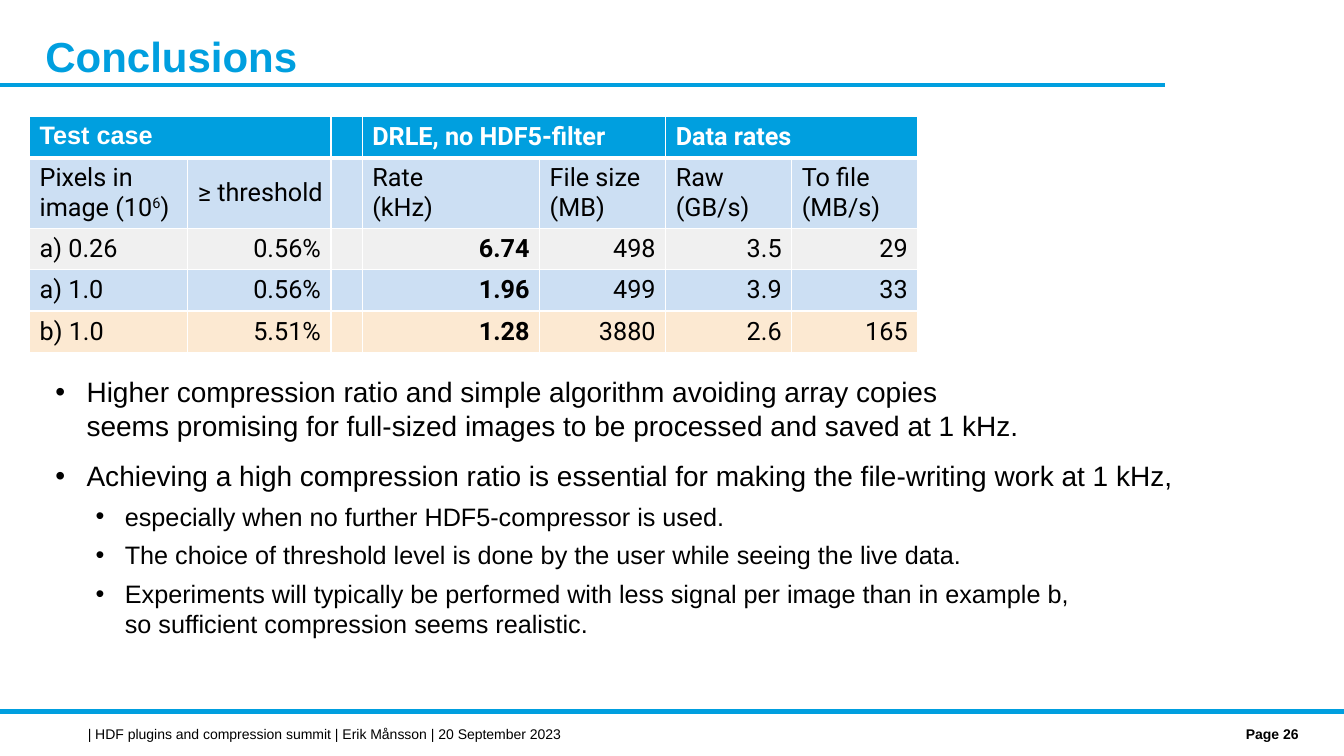
from lxml import etree
from pptx import Presentation
from pptx import util as u
from pptx.dml import color
from pptx.enum import shapes, text
from pptx.oxml import ns

HUE = {"blue": "009FDF", "pale": "CCDFF3", "gray": "F0F0F0",
       "peach": "FCE9D2", "white": "FFFFFF", "black": "000000"}
RIGHT = text.PP_ALIGN.RIGHT
MID = text.MSO_ANCHOR.MIDDLE


def rgb(name):
    return color.RGBColor.from_string(HUE[name])


def write(para, words, size=18, hue="black", bold=False, face="Arial",
          align=None, after=0, lead=None, indent=None):
    if indent:
        left, hang = indent
        props = para._p.get_or_add_pPr()
        props.set("marL", str(u.Inches(left)))
        props.set("indent", str(-u.Inches(hang)))
        etree.SubElement(props, ns.qn("a:buFont"), typeface="Arial")
        etree.SubElement(props, ns.qn("a:buChar"), char="•")
    para.alignment = align
    para.space_after = u.Pt(after)
    para.line_spacing = lead
    for row, line in enumerate(words.split("\n")):
        if row:
            para.add_line_break()
        for turn, part in enumerate(line.split("^")):
            run = para.add_run()
            run.text = part
            font = run.font
            font.size, font.bold, font.name = u.Pt(size), bold, face
            font.color.rgb = rgb(hue)
            if turn % 2:
                run._r.get_or_add_rPr().set("baseline", "30000")


class Deck:
    """Builds one slide, with lengths in hundredths of its width and height."""

    def __init__(self):
        self.file = Presentation()
        self.file.slide_width = u.Inches(13.33)
        self.file.slide_height = u.Inches(7.5)
        self.slide = self.file.slides.add_slide(self.file.slide_layouts[6])

    def wide(self, share):
        return u.Emu(round(self.file.slide_width * share / 100))

    def high(self, share):
        return u.Emu(round(self.file.slide_height * share / 100))

    def area(self, x, y, w, h):
        return self.wide(x), self.high(y), self.wide(w), self.high(h)

    def text(self, place, items, pad=(0, 0), anchor=text.MSO_ANCHOR.TOP):
        frame = self.slide.shapes.add_textbox(*self.area(*place)).text_frame
        frame.word_wrap = True
        frame.vertical_anchor = anchor
        frame.margin_left = frame.margin_right = u.Inches(pad[0])
        frame.margin_top = frame.margin_bottom = u.Inches(pad[1])
        for num, (words, style) in enumerate(items):
            para = frame.add_paragraph() if num else frame.paragraphs[0]
            write(para, words, **style)

    def rule(self, y, end):
        line = self.slide.shapes.add_connector(
            shapes.MSO_CONNECTOR.STRAIGHT, 0, self.high(y),
            self.wide(end), self.high(y))
        line.line.color.rgb = rgb("blue")
        line.line.width = u.Pt(3)
        etree.SubElement(line._element.spPr, ns.qn("a:effectLst"))

    def edge(self, cell, side, width):
        line = etree.SubElement(cell._tc.get_or_add_tcPr(),
                                ns.qn("a:ln" + side), w=str(u.Pt(width)))
        fill = etree.SubElement(line, ns.qn("a:solidFill"))
        etree.SubElement(fill, ns.qn("a:srgbClr"), val=HUE["white"])

    def table(self, x, y, cols, rows, data, fills, style):
        place = self.area(x, y, sum(cols), sum(rows))
        grid = self.slide.shapes.add_table(len(rows), len(cols), *place).table
        grid.horz_banding = False
        for col, share in zip(grid.columns, cols):
            col.width = self.wide(share)
        for r, share in enumerate(rows):
            grid.rows[r].height = self.high(share)
            for c, words in enumerate(data[r]):
                cell = grid.cell(r, c)
                for side in "LRTB":
                    thick = (r, side) in ((0, "B"), (1, "T"))
                    self.edge(cell, side, 3 if thick else 1)
                cell.fill.solid()
                cell.fill.fore_color.rgb = rgb(fills[r])
                if words is None:
                    grid.cell(r, c - 1).merge(cell)
                elif words:
                    look, anchor = style(r, c)
                    cell.vertical_anchor = anchor
                    cell.margin_right = u.Inches(0.04 if r < 2 else 0.1)
                    write(cell.text_frame.paragraphs[0], words, **look)


def style(row, col):
    if row == 0:
        face = "Roboto" if col else "Arial"
        return (dict(hue="white", bold=True, face=face),
                MID if col else text.MSO_ANCHOR.TOP)
    figure = row > 1 and col > 0
    return dict(face="Roboto", bold=figure and col == 3,
                align=RIGHT if figure else None), MID


def main():
    deck = Deck()
    deck.rule(11.2, 86.65)
    deck.rule(94.13, 100)
    deck.text((3.38, 4.53, 81.77, 6.53),
              [("Conclusions", dict(size=30, hue="blue", bold=True, lead=0.9))],
              anchor=MID)
    deck.text((6.53, 96, 81.62, 2.67),
              [("| HDF plugins and compression summit | Erik Månsson | "
                "20 September 2023", dict(size=10))])
    deck.text((88.97, 96, 7.65, 2.67),
              [("Page 26", dict(size=10, bold=True, align=RIGHT))])

    top = dict(size=20, after=6, indent=(0.31, 0.31))
    sub = dict(size=18, after=6, indent=(0.69, 0.29))
    deck.text((3.38, 48.93, 93.32, 44.67), [
        ("Higher compression ratio and simple algorithm avoiding array copies\n"
         "seems promising for full-sized images to be processed and saved "
         "at 1 kHz.", {**top, "after": 12}),
        ("Achieving a high compression ratio is essential for making the "
         "file-writing work at 1 kHz,", top),
        ("especially when no further HDF5-compressor is used.", sub),
        ("The choice of threshold level is done by the user while seeing "
         "the live data.", sub),
        ("Experiments will typically be performed with less signal per image "
         "than in example b,\nso sufficient compression seems realistic.", sub),
    ], pad=(0.1, 0.05))

    data = [
        ["Test case", None, "", "DRLE, no HDF5-filter", None,
         "Data rates", None],
        ["Pixels in image (10^6^)", "≥ threshold", "", "Rate\n(kHz)",
         "File size (MB)", "Raw\n(GB/s)", "To file\n(MB/s)"],
        ["a) 0.26", "0.56%", "", "6.74", "498", "3.5", "29"],
        ["a) 1.0", "0.56%", "", "1.96", "499", "3.9", "33"],
        ["b) 1.0", "5.51%", "", "1.28", "3880", "2.6", "165"],
    ]
    deck.table(2.2, 15.4, [11.78, 10.65, 2.33, 13.2] + [9.38] * 3,
               [5.47, 9.2] + [5.47] * 3, data,
               ["blue", "pale", "gray", "pale", "peach"], style)
    deck.file.save("out.pptx")


if __name__ == "__main__":
    main()
